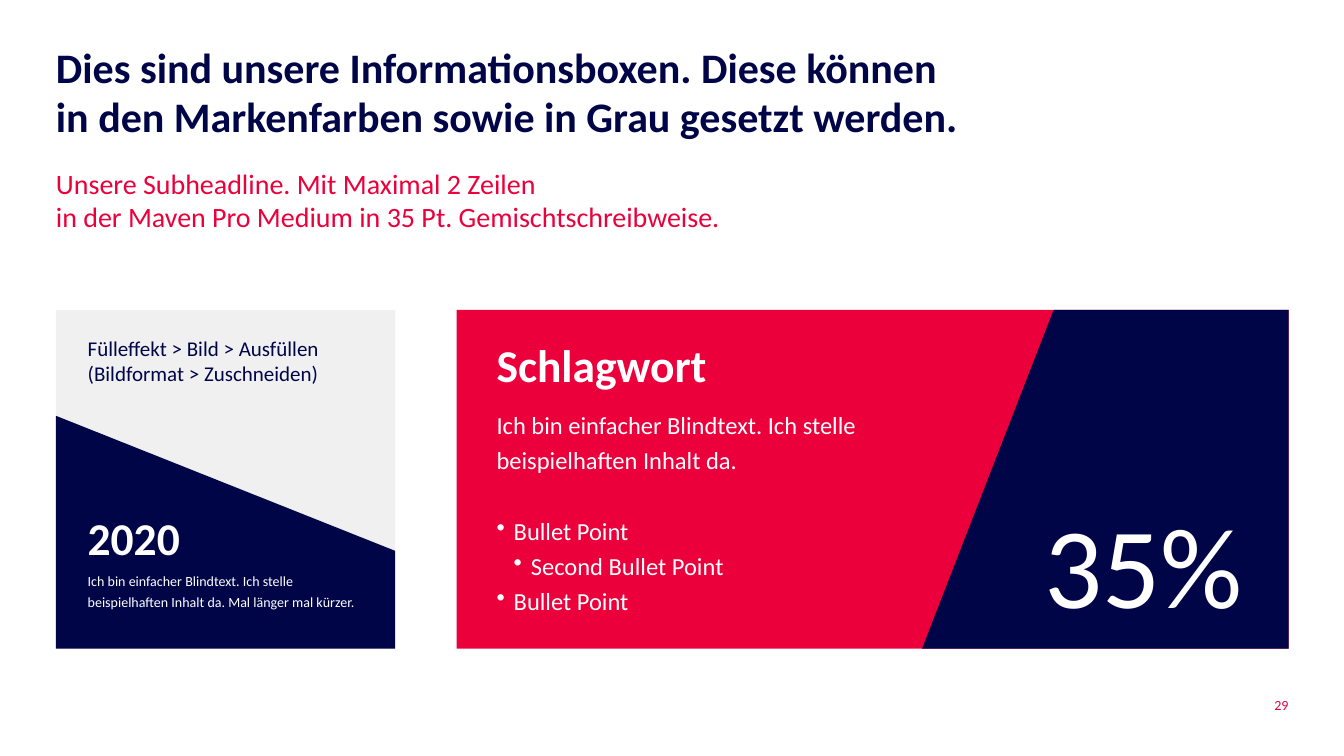
import pptx
import pptx.util
import pptx.dml.color
import pptx.enum.shapes
import pptx.enum.text
import pptx.oxml.ns
from lxml import etree

Inches, Pt = pptx.util.Inches, pptx.util.Pt
ALIGN = pptx.enum.text.PP_ALIGN
ANCHOR = pptx.enum.text.MSO_ANCHOR

THEME = {
    "font": "Calibri",
    "navy": "000548", "red": "EB003C", "grey": "F0F0F0", "white": "FFFFFF",
    "title": 60, "subtitle": 40, "keyword": 65, "body": 35,
    "hint": 30, "small": 20, "figure": 163.8,
}

TITLE = [dict(text="Dies sind unsere Informationsboxen. Diese können\vin den Markenfarben sowie in Grau gesetzt werden.",
              size="title", color="navy", bold=True, line=0.97)]
SUBTITLE = [dict(text="Unsere Subheadline. Mit Maximal 2 Zeilen\vin der Maven Pro Medium in 35 Pt. Gemischtschreibweise.",
                 size="subtitle", color="red")]
PAGE = [dict(text="29", size="small", color="red", align=ALIGN.RIGHT)]
KEYWORD = [
    dict(text="Schlagwort", size="keyword", bold=True, line=1.03, after=18),
    dict(text="Ich bin einfacher Blindtext. Ich stelle beispielhaften Inhalt da.", size="body", line=1.19),
    dict(text="Bullet Point", size="body", line=1.19, level=1, before=51),
    dict(text="Second Bullet Point", size="body", line=1.19, level=2),
    dict(text="Bullet Point", size="body", line=1.19, level=1),
]
FIGURE = [dict(text="35%", size="figure", align=ALIGN.RIGHT)]
HINT = [dict(text="Fülleffekt > Bild > Ausfüllen (Bildformat > Zuschneiden)", size="hint", color="navy")]
YEAR = [
    dict(text="2020", size="keyword", bold=True, line=1.03, after=4),
    dict(text="Ich bin einfacher Blindtext. Ich stelle beispielhaften Inhalt da. Mal länger mal kürzer.",
         size="small", line=1.25),
]

SLIDE_W, SLIDE_H = 26.66, 15
LEFT, RIGHT = 1.11, 25.56
TOP, BOTTOM = 6.15, 12.87
SMALL_RIGHT, LARGE_LEFT = 7.84, 9.06
BULLET_INDENT = 0.34


def rgb(name):
    return pptx.dml.color.RGBColor.from_string(THEME[name])


def add_bullet(p, level):
    pPr = p._p.get_or_add_pPr()
    pPr.set("marL", str(Inches(BULLET_INDENT * level)))
    pPr.set("indent", str(-Inches(BULLET_INDENT)))
    etree.SubElement(pPr, pptx.oxml.ns.qn("a:buChar")).set("char", "•")


def write(s, paragraphs, insets=(0, 0, 0, 0), anchor=ANCHOR.TOP):
    tf = s.text_frame
    tf.word_wrap = True
    tf.vertical_anchor = anchor
    tf.margin_left, tf.margin_top, tf.margin_right, tf.margin_bottom = map(Inches, insets)
    for i, item in enumerate(paragraphs):
        p = tf.add_paragraph() if i else tf.paragraphs[0]
        p.text = item["text"]
        p.alignment = item.get("align", ALIGN.LEFT)
        p.line_spacing = item.get("line", 1.0)
        p.space_before = Pt(item.get("before", 0))
        p.space_after = Pt(item.get("after", 0))
        if "level" in item:
            add_bullet(p, item["level"])
        for r in p.runs:
            r.font.name = THEME["font"]
            r.font.size = Pt(THEME[item["size"]])
            r.font.bold = item.get("bold", False)
            r.font.color.rgb = rgb(item.get("color", "white"))


def paint(s, color):
    s.shadow.inherit = False
    s.fill.solid()
    s.fill.fore_color.rgb = rgb(color)
    s.line.fill.background()
    return s


def add_text(slide, x, y, w, h, paragraphs):
    write(slide.shapes.add_textbox(*map(Inches, (x, y, w, h))), paragraphs)


def add_panel(slide, left, right, color):
    box = map(Inches, (left, TOP, right - left, BOTTOM - TOP))
    return paint(slide.shapes.add_shape(pptx.enum.shapes.MSO_SHAPE.RECTANGLE, *box), color)


def add_wedge(slide, points, color):
    start, *rest = [(Inches(x), Inches(y)) for x, y in points]
    builder = slide.shapes.build_freeform(*start)
    builder.add_line_segments(rest, close=True)
    return paint(builder.convert_to_shape(), color)


def main():
    prs = pptx.Presentation()
    prs.slide_width, prs.slide_height = Inches(SLIDE_W), Inches(SLIDE_H)
    slide = prs.slides.add_slide(prs.slide_layouts[6])

    add_text(slide, LEFT, 0.88, RIGHT - LEFT, 2.09, TITLE)
    add_text(slide, LEFT, 3.3, RIGHT - LEFT, 1.5, SUBTITLE)
    add_text(slide, RIGHT - 1.18, 13.81, 1.18, 0.47, PAGE)

    keyword = add_panel(slide, LARGE_LEFT, RIGHT, "red")
    write(keyword, KEYWORD, (0.79, 0.51, 6.46, 0.05))
    figure = add_wedge(slide, [(20.9, TOP), (18.29, BOTTOM), (RIGHT, BOTTOM), (RIGHT, TOP)], "navy")
    write(figure, FIGURE, (1.02, 0.35, 0.91, 0.35), ANCHOR.BOTTOM)

    hint = add_panel(slide, LEFT, SMALL_RIGHT, "grey")
    write(hint, HINT, (0.63, 0.5, 0.63, 0.39))
    year = add_wedge(slide, [(SMALL_RIGHT, 10.93), (SMALL_RIGHT, BOTTOM), (LEFT, BOTTOM), (LEFT, 8.25)], "navy")
    write(year, YEAR, (0.63, 0.67, 0.63, 0.77), ANCHOR.BOTTOM)

    prs.save("out.pptx")


if __name__ == "__main__":
    main()
